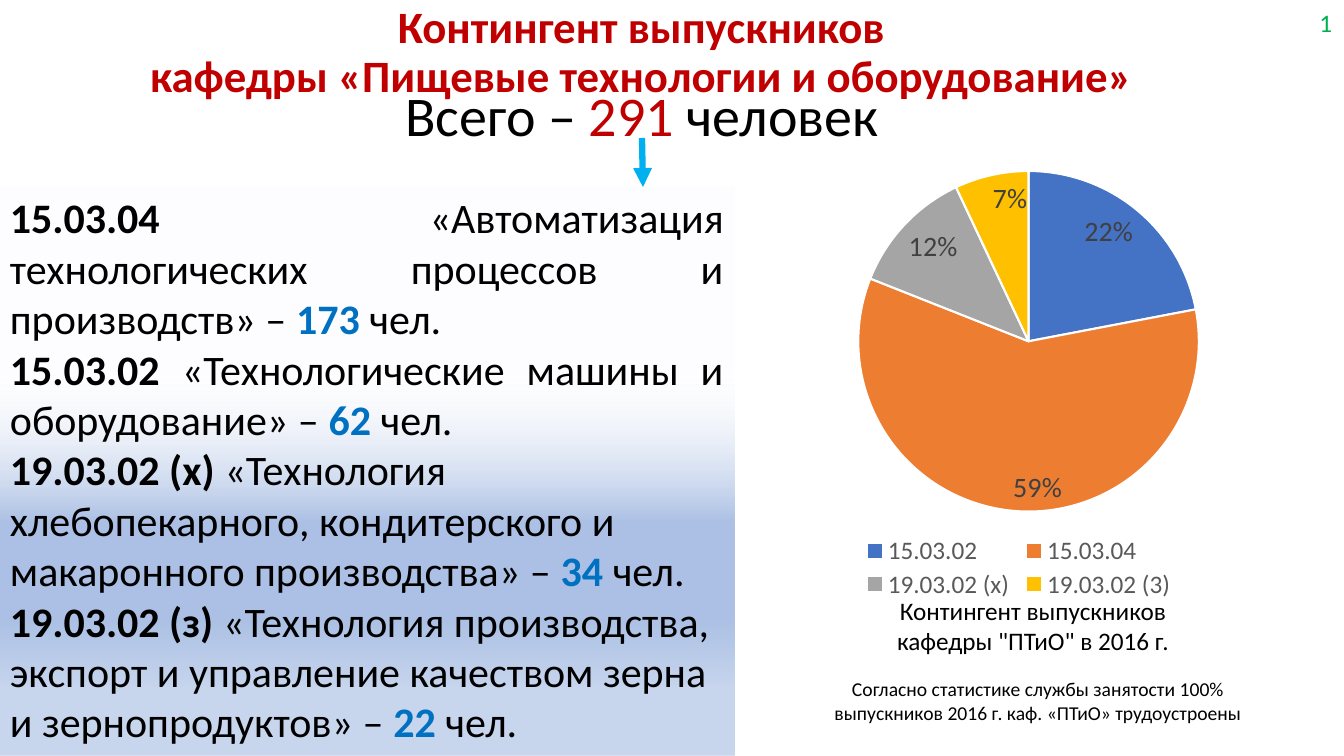
"""Build the slide about the graduates of a university department."""
from lxml.etree import SubElement
from pptx import Presentation
from pptx.chart.data import CategoryChartData
from pptx.dml.color import RGBColor
from pptx.enum.chart import XL_CHART_TYPE, XL_LABEL_POSITION, XL_LEGEND_POSITION
from pptx.enum.shapes import MSO_CONNECTOR, MSO_SHAPE
from pptx.enum.text import MSO_ANCHOR, MSO_AUTO_SIZE, PP_ALIGN
from pptx.oxml import parse_xml
from pptx.oxml.ns import nsdecls, qn
from pptx.util import Emu, Pt

EMU_PER_PX = 12192000 / 1344
FONT = "Calibri"
BLACK, RED, BLUE, GREEN = "000000", "C00000", "0070C0", "00B050"
SKY, WHITE, GREY, DARK_GREY = "00B0F0", "FFFFFF", "595959", "404040"
GRADIENT = [(33, "F6F8FC", 8), (59, "ABC0E4", 100), (76, "ABC0E4", 100), (88, "C7D5ED", 100)]
PROGRAMMES = [
    ("15.03.04", " «Автоматизация технологических процессов и производств» – ", "173", PP_ALIGN.JUSTIFY),
    ("15.03.02", " «Технологические машины и оборудование» – ", "62", PP_ALIGN.JUSTIFY),
    ("19.03.02 (х)", " «Технология хлебопекарного, кондитерского и макаронного производства» – ",
     "34", PP_ALIGN.LEFT),
    ("19.03.02 (з)", " «Технология производства, экспорт и управление качеством зерна "
     "и зернопродуктов» – ", "22", PP_ALIGN.LEFT),
]
SHARES = [
    ("15.03.02", 22, "4472C4"),
    ("15.03.04", 59, "ED7D31"),
    ("19.03.02 (х)", 12, "A5A5A5"),
    ("19.03.02 (3)", 7, "FFC000"),
]


def px(length):
    """Turn pixels into EMU."""
    return Emu(round(length * EMU_PER_PX))


def box(*lengths):
    """Turn left, top, width and height in pixels into EMU."""
    return [px(length) for length in lengths]


def color(value):
    """Turn a hex string into a colour."""
    return RGBColor.from_string(value)


def style_font(font, size, value, bold=False):
    """Set the face, size, colour and weight of a font."""
    font.name = FONT
    font.size = Pt(size)
    font.bold = bold
    font.color.rgb = color(value)


def add_run(paragraph, text, size, value=BLACK, bold=False):
    """Add one formatted run to a paragraph."""
    run = paragraph.add_run()
    run.text = text
    style_font(run.font, size, value, bold)


def prepare_paragraphs(frame, alignments):
    """Return one aligned paragraph for each alignment."""
    frame.word_wrap = True
    paragraphs = [frame.paragraphs[0]] + [frame.add_paragraph() for _ in alignments[1:]]
    for paragraph, alignment in zip(paragraphs, alignments):
        paragraph.alignment = alignment
    return paragraphs


def add_label(slide, bounds, lines, size, value=BLACK, alignment=PP_ALIGN.CENTER):
    """Add a text box with one paragraph for each line."""
    frame = slide.shapes.add_textbox(*box(*bounds)).text_frame
    for paragraph, line in zip(prepare_paragraphs(frame, [alignment] * len(lines)), lines):
        add_run(paragraph, line, size, value)


def prepare_placeholder(placeholder, bounds, anchor):
    """Move a placeholder and return its centred first paragraph."""
    placeholder.left, placeholder.top, placeholder.width, placeholder.height = box(*bounds)
    frame = placeholder.text_frame
    frame.auto_size = MSO_AUTO_SIZE.NONE
    frame.vertical_anchor = anchor
    paragraph = prepare_paragraphs(frame, [PP_ALIGN.CENTER])[0]
    paragraph.line_spacing = 0.9
    paragraph.space_before = Pt(0)
    return paragraph


def add_headings(slide):
    """Fill the title and the subtitle."""
    title = prepare_placeholder(slide.shapes.title, (58, 41, 1167, 66), MSO_ANCHOR.BOTTOM)
    add_run(title, "Контингент выпускников", 32, RED, True)
    title.add_line_break()
    add_run(title, "кафедры «Пищевые технологии и оборудование»", 32, RED, True)
    total = prepare_placeholder(slide.placeholders[1], (138, 83, 1008, 54), MSO_ANCHOR.TOP)
    for text, value in [("Всего – ", BLACK), ("291", RED), (" человек", BLACK)]:
        add_run(total, text, 40, value)


def add_arrow(slide, start, end):
    """Add a straight arrow between two points."""
    arrow = slide.shapes.add_connector(MSO_CONNECTOR.STRAIGHT, *box(*start, *end))
    arrow.line.color.rgb = color(SKY)
    arrow.line.width = Pt(4.5)
    SubElement(arrow.line._get_or_add_ln(), qn("a:tailEnd"), type="triangle")
    SubElement(arrow._element.spPr, qn("a:effectLst"))


def fill_gradient(shape, stops):
    """Fill a shape from top to bottom with the given colour stops."""
    shape.fill.gradient()
    shape.fill.gradient_angle = 270
    stop_list = shape._element.spPr.find(qn("a:gradFill")).find(qn("a:gsLst"))
    stop_list.clear()
    for position, value, opacity in stops:
        stop = SubElement(stop_list, qn("a:gs"), pos=str(position * 1000))
        stop_color = SubElement(stop, qn("a:srgbClr"), val=value)
        SubElement(stop_color, qn("a:alpha"), val=str(opacity * 1000))


def add_programmes(slide):
    """Add the panel that lists the programmes and their graduates."""
    panel = slide.shapes.add_shape(MSO_SHAPE.RECTANGLE, *box(0, 187, 734, 569))
    panel.shadow.inherit = False
    panel.line.fill.background()
    fill_gradient(panel, GRADIENT)
    panel.text_frame.vertical_anchor = MSO_ANCHOR.TOP
    paragraphs = prepare_paragraphs(panel.text_frame, [row[3] for row in PROGRAMMES])
    for paragraph, (code, name, count, _) in zip(paragraphs, PROGRAMMES):
        add_run(paragraph, code, 30, bold=True)
        add_run(paragraph, name, 30)
        add_run(paragraph, count, 30, BLUE, True)
        add_run(paragraph, " чел.", 30)


def place_in_chart(element, index, target, bounds):
    """Give a chart part a manual layout in fractions of the chart."""
    for layout in element.findall(qn("c:layout")):
        element.remove(layout)
    inner = '<c:layoutTarget val="inner"/>' if target == "inner" else ""
    modes = "".join(f'<c:{axis}Mode val="edge"/>' for axis in "xy")
    sizes = "".join(f'<c:{side} val="{value}"/>' for side, value in zip("xywh", bounds))
    element.insert(index, parse_xml(
        f'<c:layout {nsdecls("c")}><c:manualLayout>{inner}{modes}{sizes}</c:manualLayout></c:layout>'))


def add_pie(slide):
    """Add the pie chart of the programme shares."""
    data = CategoryChartData()
    data.categories = [name for name, _, _ in SHARES]
    data.add_series("Series 1", [share for _, share, _ in SHARES])
    chart = slide.shapes.add_chart(XL_CHART_TYPE.PIE, *box(688, 115, 655, 492), data).chart
    chart.has_title = False
    style_font(chart.font, 10, BLACK)
    chart.has_legend = True
    chart.legend.position = XL_LEGEND_POSITION.BOTTOM
    chart.legend.include_in_layout = False
    style_font(chart.legend.font, 18, GREY)
    plot = chart.plots[0]
    plot.vary_by_categories = True
    for index, (_, _, value) in enumerate(SHARES):
        slice_format = plot.series[0].points[index].format
        slice_format.fill.solid()
        slice_format.fill.fore_color.rgb = color(value)
        slice_format.line.color.rgb = color(WHITE)
        slice_format.line.width = Pt(1.5)
    labels = plot.series[0].data_labels
    labels.show_percentage = True
    labels.show_value = False
    labels.number_format = "0%"
    labels.number_format_is_linked = False
    labels.position = XL_LABEL_POSITION.INSIDE_END
    style_font(labels.font, 20, DARK_GREY)
    place_in_chart(plot._element.getparent(), 0, "inner", (0.26, 0.11, 0.52, 0.7))
    place_in_chart(chart.legend._element, 1, "outer", (0.26, 0.85, 0.49, 0.14))


def main():
    """Build and save the presentation."""
    presentation = Presentation()
    presentation.slide_width, presentation.slide_height = box(1344, 756)
    slide = presentation.slides.add_slide(presentation.slide_layouts[0])
    add_headings(slide)
    add_arrow(slide, (642, 138), (643, 187))
    add_programmes(slide)
    add_pie(slide)
    add_label(slide, (734, 590, 598, 101),
              ["Контингент выпускников", "кафедры \"ПТиО\" в 2016 г."], 18)
    add_label(slide, (1280, 2, 62, 40), ["1"], 18, GREEN, PP_ALIGN.RIGHT)
    add_label(slide, (734, 672, 608, 57),
              ["Согласно статистике службы занятости 100%",
               "выпускников 2016 г. каф. «ПТиО» трудоустроены"], 14)
    presentation.save("out.pptx")


if __name__ == "__main__":
    main()
